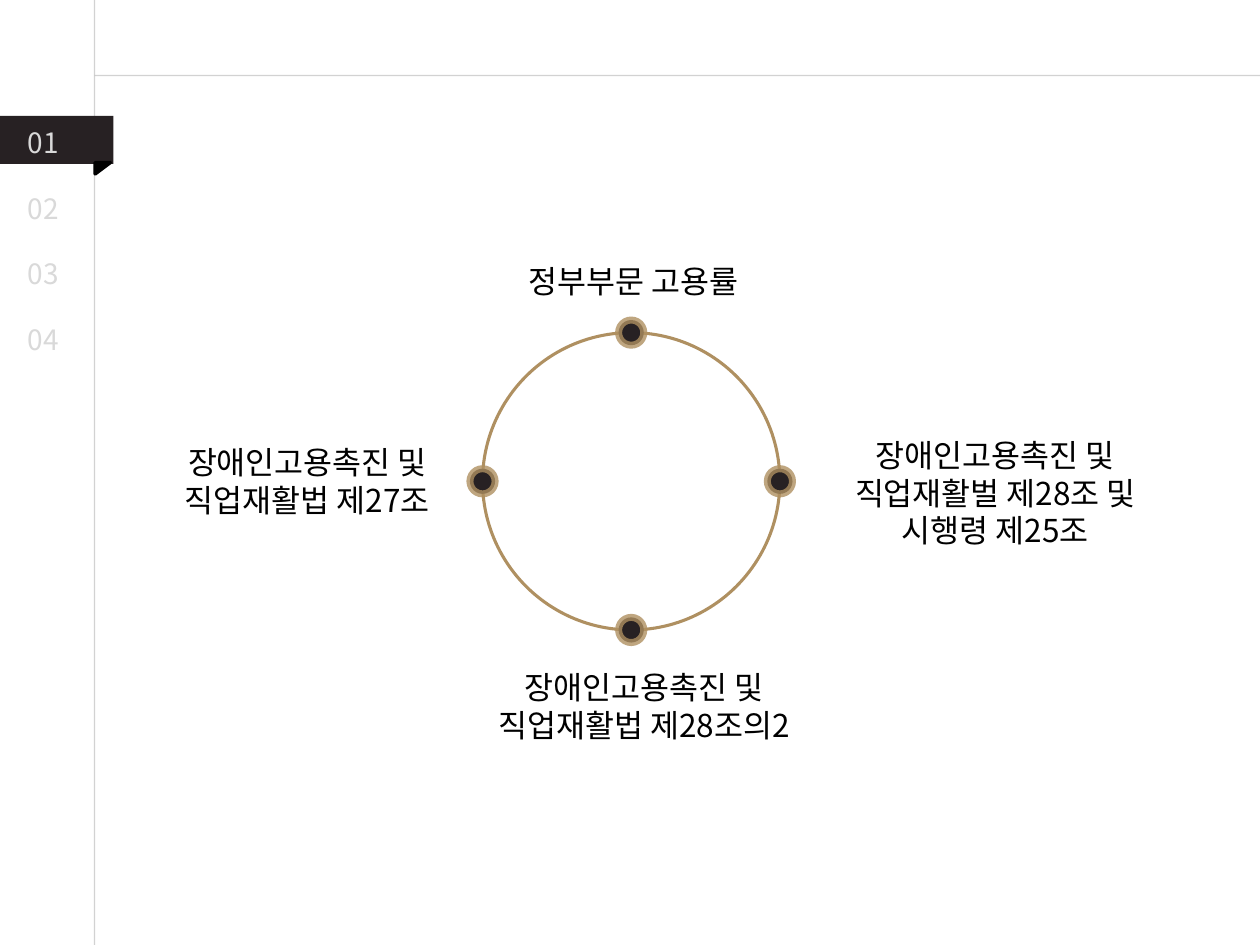
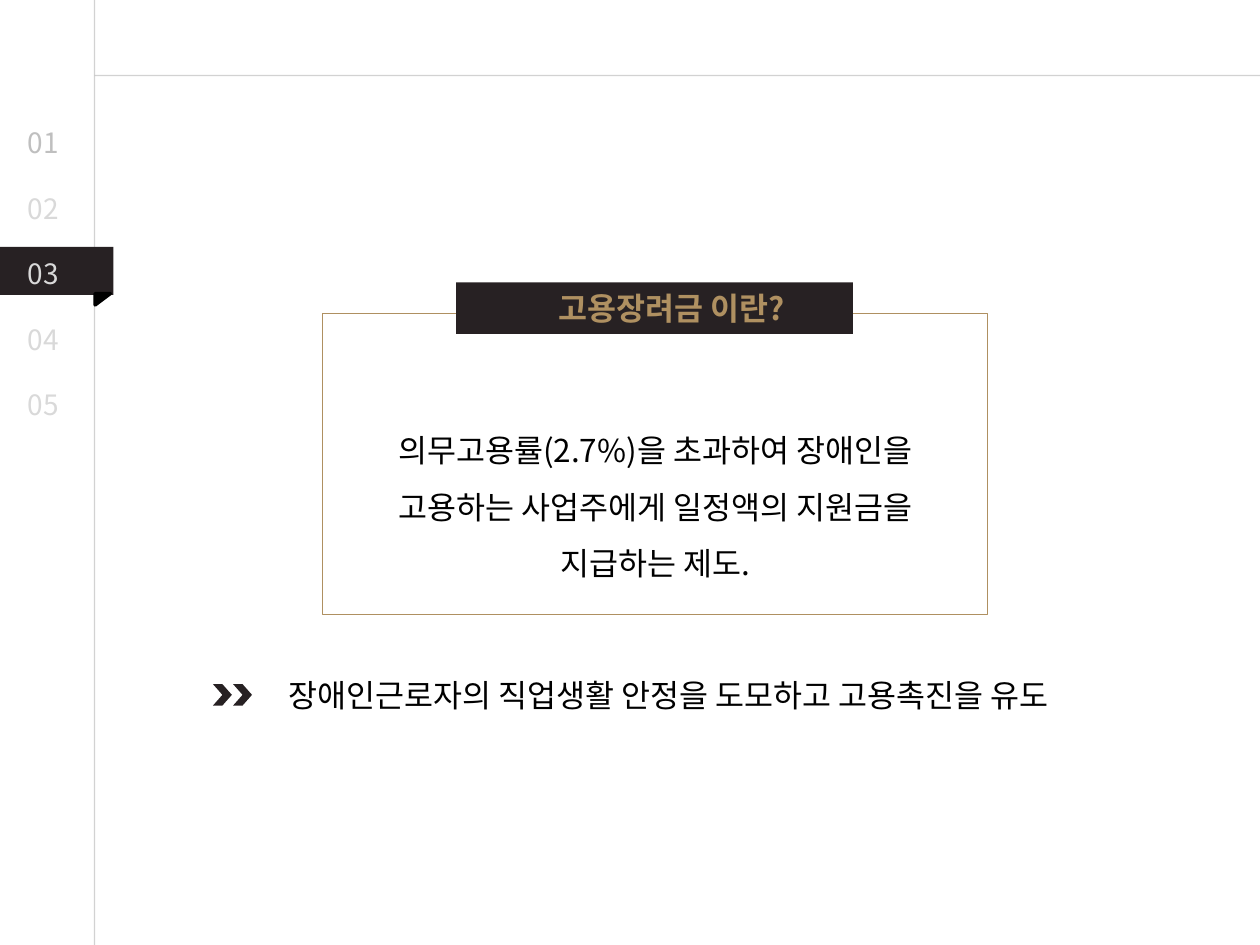
from lxml import etree
from pptx import Presentation
from pptx.dml.color import RGBColor
from pptx.enum.shapes import MSO_CONNECTOR, MSO_SHAPE
from pptx.enum.text import MSO_ANCHOR, MSO_AUTO_SIZE, PP_ALIGN
from pptx.oxml.ns import qn
from pptx.util import Inches, Pt

RECT, OVAL = MSO_SHAPE.RECTANGLE, MSO_SHAPE.OVAL
CORNER, CHEVRON = MSO_SHAPE.RIGHT_TRIANGLE, MSO_SHAPE.CHEVRON
STRAIGHT = MSO_CONNECTOR.STRAIGHT
MIDDLE = MSO_ANCHOR.MIDDLE
FIXED, GROW = MSO_AUTO_SIZE.NONE, MSO_AUTO_SIZE.SHAPE_TO_FIT_TEXT
LEFT, CENTER = PP_ALIGN.LEFT, PP_ALIGN.CENTER
TITLE_ONLY, BLANK = 5, 6

COLUMNS, ROWS = 100, 75
FONT = "Noto Sans CJK KR"
COLORS = {
    "dark": "272123",
    "gold": "AF9061",
    "text": "000000",
    "rule": "A6A6A6",
    "number": "D9D9D9",
    "muted": "BFBFBF",
}
RULE_COLUMN, RULE_ROW = 7.5, 6
MENU_STEP = 5.2


class Deck:
    """Holds the style and the current slide; lengths are grid columns and rows."""

    def __init__(self):
        self.file = Presentation()
        self.file.slide_width, self.file.slide_height = Inches(10), Inches(7.5)
        self.slide = None

    def cells(self, left, top, width, height):
        column = self.file.slide_width / COLUMNS
        row = self.file.slide_height / ROWS
        return [round(n) for n in (left * column, top * row, width * column, height * row)]

    def color(self, name):
        return RGBColor.from_string(COLORS[name])

    def stroke(self, line, color, points, opacity=100):
        line.color.rgb = self.color(color)
        line.width = Pt(points)
        if opacity < 100:
            for rgb in line._get_or_add_ln().iter(qn("a:srgbClr")):
                etree.SubElement(rgb, qn("a:alpha"), val=str(opacity * 1000))

    def rule(self, start, end):
        rule = self.slide.shapes.add_connector(STRAIGHT, *self.cells(*start, *end))
        self.stroke(rule.line, "rule", 0.75, 50)
        etree.SubElement(rule._element.spPr, qn("a:effectLst"))

    def shape(self, kind, box, fill=None, line=None, points=1, opacity=100):
        shape = self.slide.shapes.add_shape(kind, *self.cells(*box))
        shape.shadow.inherit = False
        if fill:
            shape.fill.solid()
            shape.fill.fore_color.rgb = self.color(fill)
        else:
            shape.fill.background()
        if line:
            self.stroke(shape.line, line, points, opacity)
        else:
            shape.line.fill.background()
        return shape

    def set_text(self, frame, words, size, color, align, bold=False, spacing=1.0):
        frame.word_wrap = True
        paragraph = frame.paragraphs[0]
        paragraph.text = words
        paragraph.alignment, paragraph.line_spacing = align, spacing
        font = paragraph.font
        font.name, font.size, font.bold = FONT, Pt(size), bold
        font.color.rgb = self.color(color)
        etree.SubElement(font._rPr, qn("a:ea"), typeface=FONT)

    def text(self, words, box, size=18, color="text", align=CENTER, spacing=1.0):
        frame = self.slide.shapes.add_textbox(*self.cells(*box)).text_frame
        self.set_text(frame, words, size, color, align, spacing=spacing)
        frame.auto_size = GROW

    def title(self, words, box, indent):
        """Shows the title as a dark band in front of everything drawn so far."""
        title = self.slide.shapes.title
        self.slide.shapes.element.append(title.element)
        title.left, title.top, title.width, title.height = self.cells(*box)
        title.fill.solid()
        title.fill.fore_color.rgb = self.color("dark")
        frame = title.text_frame
        frame.auto_size = FIXED
        frame.vertical_anchor = MIDDLE
        frame.margin_left = self.cells(indent, 0, 0, 0)[0]
        self.set_text(frame, words, 18, "gold", LEFT, bold=True)

    def add_slide(self, layout, sections, active, first_color="number"):
        """Starts a slide with its rules and the section menu, active tab marked."""
        self.slide = self.file.slides.add_slide(self.file.slide_layouts[layout])
        self.rule((RULE_COLUMN, 0), (RULE_COLUMN, ROWS))
        self.rule((RULE_COLUMN, RULE_ROW), (COLUMNS, RULE_ROW))
        tab_top = 9.2 + (active - 1) * MENU_STEP
        self.shape(RECT, (0, tab_top, 9, 3.8), "dark")
        fold = self.shape(CORNER, (7.7, tab_top + 3.55, 0.9, 1.2), "text", "text", 2)
        fold.rotation = 90
        for index in range(sections):
            self.text(f"{index + 1:02}", (1.2, 9.5 + index * MENU_STEP, 4.9, 3.7),
                      16, "number" if index else first_color, LEFT)


def add_law_circle(deck):
    deck.add_slide(BLANK, sections=4, active=1)
    center_x, center_y, radius, dot = 50.1, 38.2, 11.8, 2
    deck.shape(OVAL, (center_x - radius, center_y - radius, 2 * radius, 2 * radius),
               line="gold", points=1.75)
    laws = [
        (0, -1, "정부부문 고용률", (40.3, 20.3, 20, 4)),
        (-1, 0, "장애인고용촉진 및 직업재활법 제27조", (13.4, 34.7, 22, 7.1)),
        (1, 0, "장애인고용촉진 및 직업재활벌 제28조 및 시행령 제25조",
         (64.9, 34.1, 28.2, 10.1)),
        (0, 1, "장애인고용촉진 및 직업재활법 제28조의2", (37, 52.5, 28.2, 7.1)),
    ]
    for across, down, law, box in laws:
        deck.shape(OVAL, (center_x + across * radius - dot / 2,
                          center_y + down * radius - dot / 2, dot, dot),
                   "dark", "gold", 4, 80)
        deck.text(law, box)


def add_subsidy_definition(deck):
    deck.add_slide(TITLE_ONLY, sections=5, active=3, first_color="muted")
    deck.shape(RECT, (25.6, 24.9, 52.8, 23.9), line="gold", points=0.5)
    deck.title("고용장려금 이란?", (36.2, 22.4, 31.5, 4.1), indent=8.1)
    deck.text("의무고용률(2.7%)을 초과하여 장애인을 고용하는 사업주에게 "
              "일정액의 지원금을 지급하는 제도.", (26, 32.2, 52, 10.1), spacing=1.5)
    for chevron_left in (16.9, 18.5):
        deck.shape(CHEVRON, (chevron_left, 54.3, 1.5, 1.7), "dark")
    deck.text("장애인근로자의 직업생활 안정을 도모하고 고용촉진을 유도",
              (21.9, 53.2, 66, 4), align=LEFT)


def main():
    deck = Deck()
    add_law_circle(deck)
    add_subsidy_definition(deck)
    deck.file.save("out.pptx")


if __name__ == "__main__":
    main()
